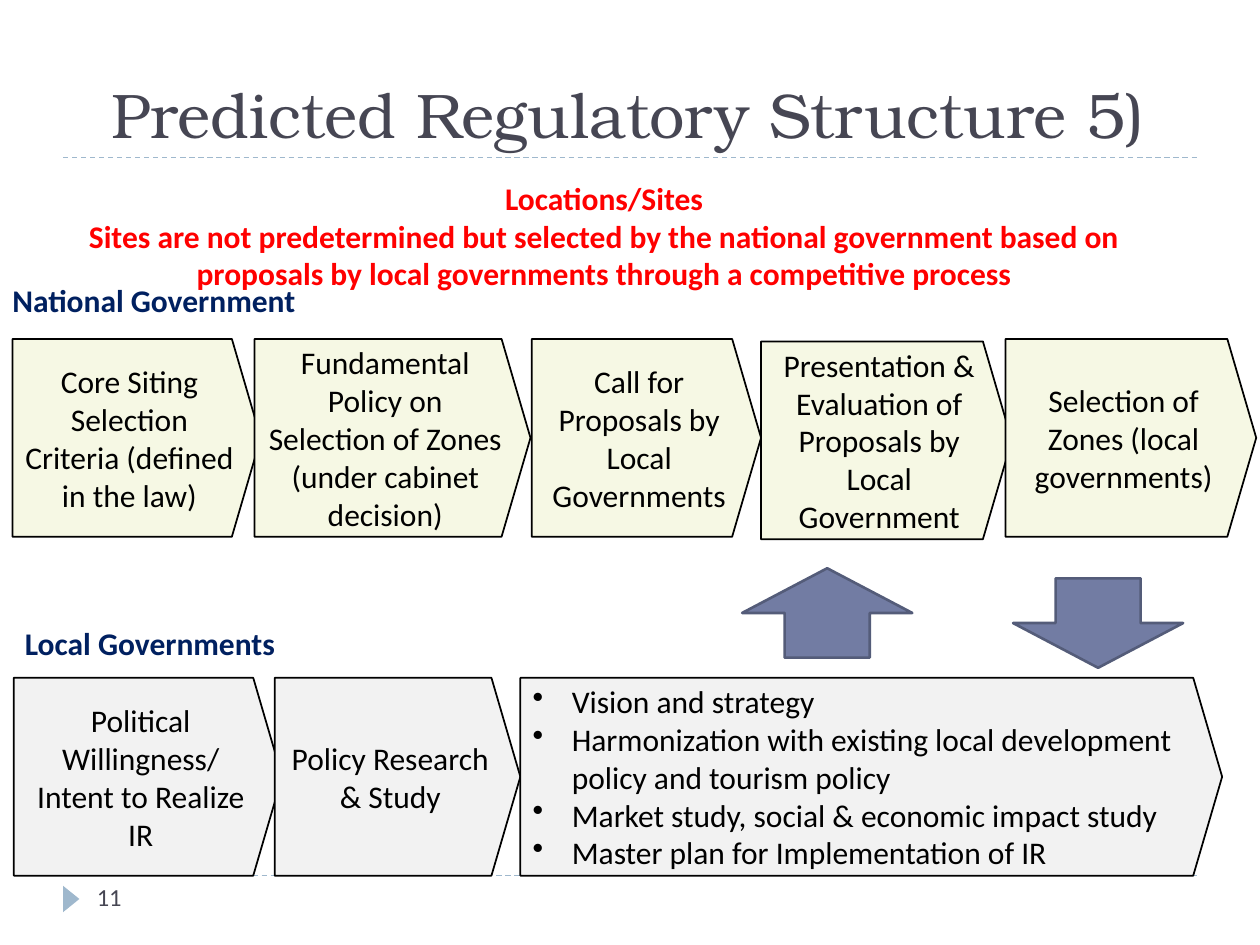
import pptx
import pptx.util
import pptx.dml.color
import pptx.enum.dml
import pptx.enum.shapes
import pptx.enum.text
from dataclasses import dataclass
from lxml import etree

Inches = pptx.util.Inches
Pt = pptx.util.Pt
Shape = pptx.enum.shapes.MSO_SHAPE
Align = pptx.enum.text.PP_ALIGN
Anchor = pptx.enum.text.MSO_ANCHOR


@dataclass(frozen=True)
class Theme:
    body_font: str = "Calibri"
    title_font: str = "TeX Gyre Bonum"
    title_size: int = 36
    body_size: int = 18
    number_size: int = 14
    slate: str = "464653"
    red: str = "FF0000"
    navy: str = "002060"
    black: str = "000000"
    rule: str = "9FB8CD"
    national: str = "F6F8E4"
    local: str = "F2F2F2"
    arrow: str = "727CA3"
    arrow_edge: str = "545C79"


theme = Theme()
rgb = pptx.dml.color.RGBColor.from_string


def write(box, lines, color=theme.black, size=theme.body_size, font=theme.body_font,
          bold=False, align=Align.LEFT, anchor=Anchor.TOP):
    """Fill the box with one paragraph per line, all in the same style."""
    frame = box.text_frame
    frame.word_wrap = True
    frame.vertical_anchor = anchor
    frame.text = "\n".join(lines)
    for para in frame.paragraphs:
        para.alignment = align
        para.font.name = font
        para.font.size = Pt(size)
        para.font.bold = bold
        para.font.color.rgb = rgb(color)


def add_filled(kind, left, top, width, height, fill, edge=None, weight=1):
    shape = page.shapes.add_shape(kind, Inches(left), Inches(top), Inches(width), Inches(height))
    shape.shadow.inherit = False
    shape.fill.solid()
    shape.fill.fore_color.rgb = rgb(fill)
    if edge:
        shape.line.color.rgb = rgb(edge)
        shape.line.width = Pt(weight)
    else:
        shape.line.fill.background()
    return shape


deck = pptx.Presentation()
deck.slide_width, deck.slide_height = Inches(10), Inches(7.5)
page = deck.slides.add_slide(deck.slide_layouts[5])

# Page frame: dashed rules and the page marker
for y in (6.95, 1.25):
    rule = page.shapes.add_connector(pptx.enum.shapes.MSO_CONNECTOR.STRAIGHT,
                                     Inches(0.5), Inches(y), Inches(9.5), Inches(y))
    rule.line.color.rgb = rgb(theme.rule)
    rule.line.width = Pt(0.75)
    rule.line.dash_style = pptx.enum.dml.MSO_LINE.DASH
    etree.SubElement(rule._element.spPr, pptx.oxml.ns.qn("a:effectLst"))
marker = add_filled(Shape.ISOSCELES_TRIANGLE, 0.46, 7.07, 0.21, 0.13, theme.rule)
marker.rotation = 90

title = page.shapes.title
title.left, title.top, title.width, title.height = Inches(0.1), Inches(0.25), Inches(9.77), Inches(1)
write(title, ["Predicted Regulatory Structure 5)"], theme.slate, theme.title_size,
      theme.title_font, align=Align.CENTER, anchor=Anchor.BOTTOM)

# Free text: left, top, width, height, lines, style
texts = [
    (0.2, 1.37, 9.19, 1.01,
     ["Locations/Sites",
      "Sites are not predetermined but selected by the national government based on "
      "proposals by local governments through a competitive process"],
     dict(color=theme.red, bold=True, align=Align.CENTER)),
    (0, 2.18, 2.6, 0.4, ["National Government"], dict(color=theme.navy, bold=True)),
    (0.1, 4.9, 3.1, 0.4, ["Local Governments"], dict(color=theme.navy, bold=True)),
    (0.67, 6.95, 2.17, 0.4, ["11"], dict(color=theme.slate, size=theme.number_size)),
]
for left, top, width, height, lines, style in texts:
    box = page.shapes.add_textbox(Inches(left), Inches(top), Inches(width), Inches(height))
    write(box, lines, **style)

# Process steps: left, top, width, fill, lines
steps = [
    (0.1, 2.69, 1.97, theme.national, ["Core Siting Selection Criteria (defined in the law)"]),
    (2.02, 2.69, 2.19, theme.national,
     ["Fundamental Policy on Selection of Zones (under cabinet decision)"]),
    (4.22, 2.69, 1.82, theme.national, ["Call for Proposals by Local Governments"]),
    (6.04, 2.71, 1.99, theme.national,
     ["Presentation & Evaluation of Proposals by Local Government"]),
    (7.98, 2.69, 1.99, theme.national, ["Selection of Zones (local governments)"]),
    (0.11, 5.38, 2.13, theme.local, ["Political Willingness/ Intent to Realize IR"]),
    (2.18, 5.38, 1.95, theme.local, ["Policy Research & Study"]),
    (4.13, 5.38, 5.57, theme.local,
     ["Vision and strategy",
      "Harmonization with existing local development policy and tourism policy",
      "Market study, social & economic impact study",
      "Master plan for Implementation of IR"]),
]
for left, top, width, fill, lines in steps:
    step = add_filled(Shape.PENTAGON, left, top, width, 1.57, fill, theme.black)
    step.adjustments[0] = 0.146
    is_list = len(lines) > 1
    write(step, lines, align=Align.LEFT if is_list else Align.CENTER, anchor=Anchor.MIDDLE)
    if is_list:
        for para in step.text_frame.paragraphs:
            properties = para._p.get_or_add_pPr()
            properties.set("marL", str(Inches(0.31)))
            properties.set("indent", str(-Inches(0.31)))
            bullet = pptx.oxml.parse_xml(
                f'<a:buChar {pptx.oxml.ns.nsdecls("a")} char="•"/>')
            properties.insert_element_before(bullet, "a:tabLst", "a:defRPr", "a:extLst")

# Exchange between the two levels of government
for kind, left, top in ((Shape.UP_ARROW, 5.89, 4.51), (Shape.DOWN_ARROW, 8.04, 4.59)):
    add_filled(kind, left, top, 1.35, 0.71, theme.arrow, theme.arrow_edge, 1.5)

deck.save("out.pptx")
